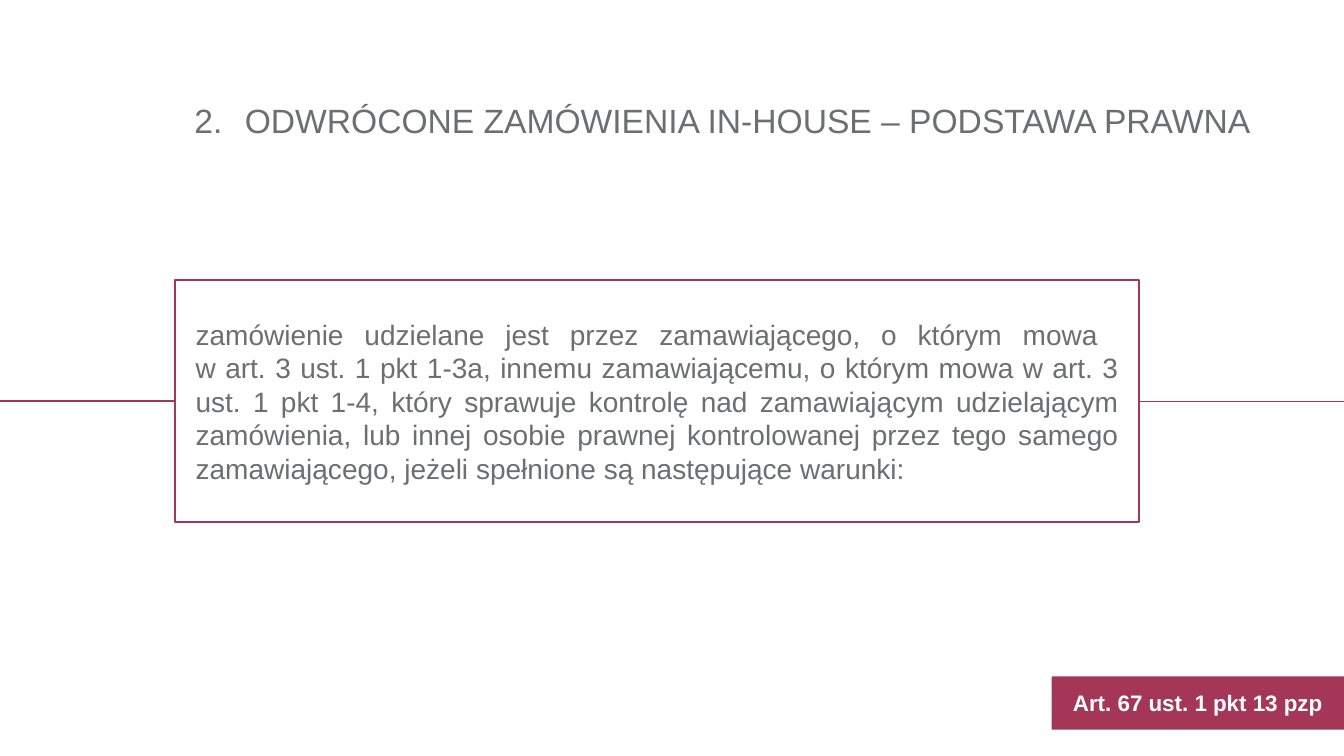
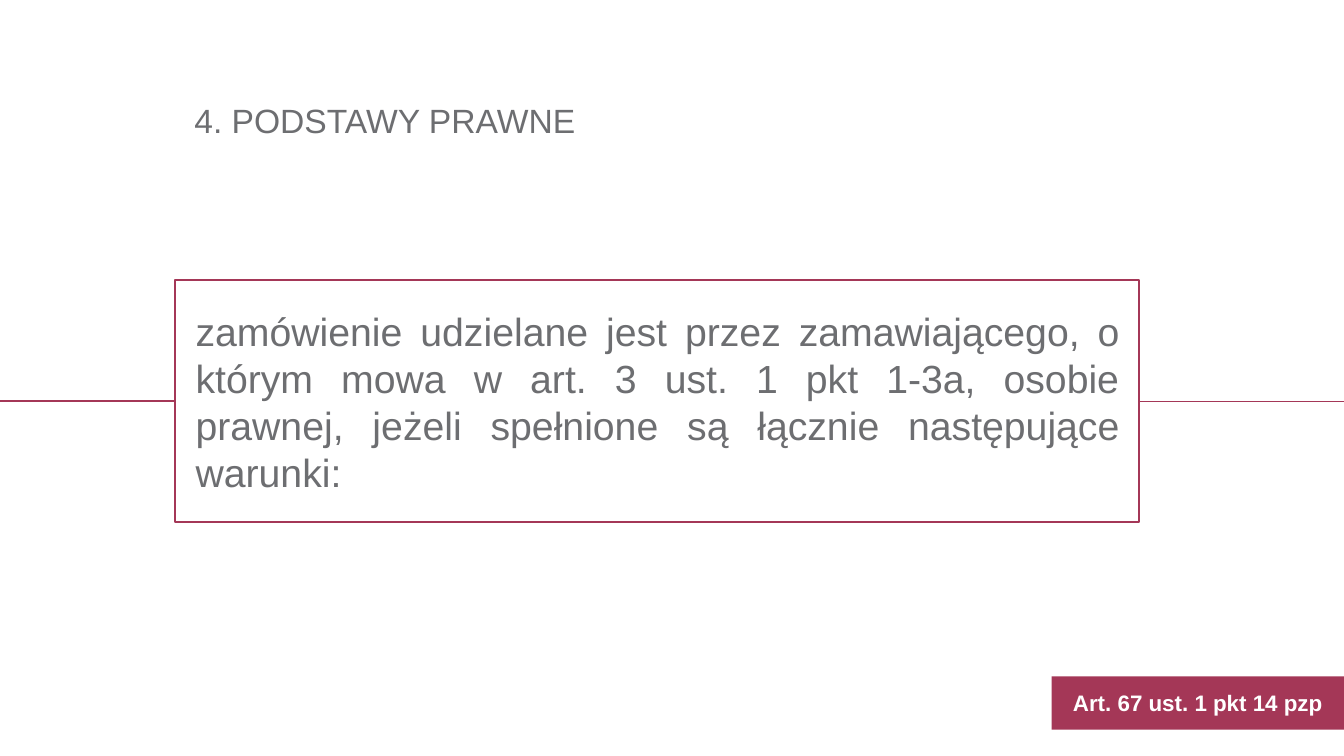
import pptx
import pptx.util
import pptx.dml.color
import pptx.enum.shapes
import pptx.enum.text
import pptx.oxml.ns
import lxml.etree

Inches = pptx.util.Inches
Pt = pptx.util.Pt
RGBColor = pptx.dml.color.RGBColor
ALIGN = pptx.enum.text.PP_ALIGN
ANCHOR = pptx.enum.text.MSO_ANCHOR
WINE = RGBColor(0xA4, 0x37, 0x57)
GRAY = RGBColor(0x6D, 0x6E, 0x71)
WHITE = RGBColor(0xFF, 0xFF, 0xFF)

WIDE = 13.33
AXIS = 3.98
RULES = [(0, 1.96, 1), (10.75, WIDE, 0.5)]
PARTS = {
    "title": {
        "at": (1.83, 0.99, 11.5, 1.45), "fill": None, "edge": None, "ink": GRAY,
        "frame": {"vertical_anchor": ANCHOR.TOP},
        "para": {"alignment": ALIGN.LEFT, "line_spacing": 0.9},
        "font": {"size": Pt(24)},
    },
    "body": {
        "at": (1.74, 2.78, 9.56, 2.4), "fill": WHITE, "edge": WINE, "ink": GRAY,
        "frame": {"vertical_anchor": ANCHOR.MIDDLE,
                  "margin_left": Inches(0.2), "margin_right": Inches(0.2)},
        "para": {"alignment": ALIGN.JUSTIFY},
        "font": {},
    },
    "tag": {
        "at": (10.43, 6.71, 2.9, 0.53), "fill": WINE, "edge": None, "ink": WHITE,
        "frame": {"vertical_anchor": ANCHOR.MIDDLE},
        "para": {"alignment": ALIGN.CENTER},
        "font": {"size": Pt(16), "bold": True},
    },
}
PAGES = [
    {
        "title": "ODWRÓCONE ZAMÓWIENIA IN-HOUSE – PODSTAWA PRAWNA",
        "start": 2,
        "body": "zamówienie udzielane jest przez zamawiającego, o którym mowa \n"
                "w art. 3 ust. 1 pkt 1-3a, innemu zamawiającemu, o którym mowa w art. 3 "
                "ust. 1 pkt 1-4, który sprawuje kontrolę nad zamawiającym udzielającym "
                "zamówienia, lub innej osobie prawnej kontrolowanej przez tego samego "
                "zamawiającego, jeżeli spełnione są następujące warunki:",
        "size": 20,
        "tag": "Art. 67 ust. 1 pkt 13 pzp",
    },
    {
        "title": "4. PODSTAWY PRAWNE",
        "start": None,
        "body": "zamówienie udzielane jest przez zamawiającego, o którym mowa "
                "w art. 3 ust. 1 pkt 1-3a, osobie prawnej, jeżeli spełnione są "
                "łącznie następujące warunki:",
        "size": 28,
        "tag": "Art. 67 ust. 1 pkt 14 pzp",
    },
]


def style(item, values):
    for name, value in values.items():
        setattr(item, name, value)


def number(para, start):
    props = para._p.get_or_add_pPr()
    style_at = {"marL": Inches(0.5), "indent": Inches(-0.5)}
    for name, value in style_at.items():
        props.set(name, str(int(value)))
    mark = lxml.etree.SubElement(props, pptx.oxml.ns.qn("a:buAutoNum"))
    mark.set("type", "arabicPeriod")
    mark.set("startAt", str(start))


deck = pptx.Presentation()
style(deck, {"slide_width": Inches(WIDE), "slide_height": Inches(7.5)})

for page in PAGES:
    slide = deck.slides.add_slide(deck.slide_layouts[6])
    for left, right, weight in RULES:
        rule = slide.shapes.add_connector(
            pptx.enum.shapes.MSO_CONNECTOR.STRAIGHT,
            Inches(left), Inches(AXIS), Inches(right), Inches(AXIS))
        rule.line.color.rgb = WINE
        rule.line.width = Pt(weight)
        lxml.etree.SubElement(rule._element.spPr, pptx.oxml.ns.qn("a:effectLst"))

    for name, part in PARTS.items():
        place = [Inches(value) for value in part["at"]]
        if part["fill"] is None:
            box = slide.shapes.add_textbox(*place)
        else:
            box = slide.shapes.add_shape(
                pptx.enum.shapes.MSO_SHAPE.RECTANGLE, *place)
            box.shadow.inherit = False
            box.fill.solid()
            box.fill.fore_color.rgb = part["fill"]
            if part["edge"] is None:
                box.line.fill.background()
            else:
                box.line.color.rgb = part["edge"]
                box.line.width = Pt(1.5)
        frame = box.text_frame
        style(frame, {"word_wrap": True, **part["frame"]})
        para = frame.paragraphs[0]
        para.text = page[name]
        if name == "title" and page["start"]:
            number(para, page["start"])
        style(para, part["para"])
        for run in para.runs:
            style(run.font, {"name": "Arial", "size": Pt(page["size"]), **part["font"]})
            run.font.color.rgb = part["ink"]

deck.save("out.pptx")
